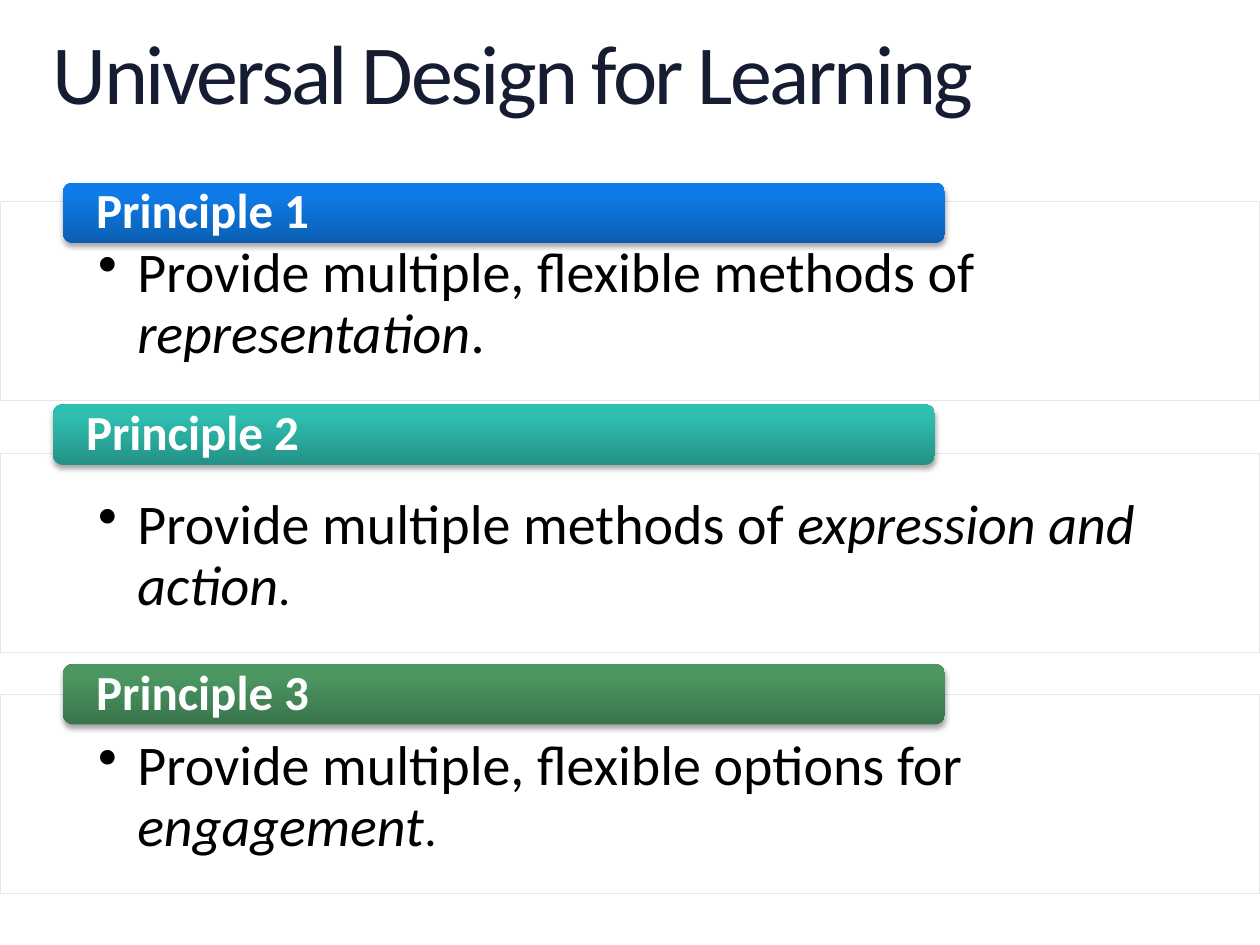
import pptx
import pptx.util
import pptx.dml.color
import pptx.enum.shapes
import pptx.enum.text
import pptx.oxml.ns
from dataclasses import dataclass
from lxml import etree

Inches = pptx.util.Inches
Pt = pptx.util.Pt
RGB = pptx.dml.color.RGBColor.from_string
SHAPE = pptx.enum.shapes.MSO_SHAPE
ANCHOR = pptx.enum.text.MSO_ANCHOR
ALIGN = pptx.enum.text.PP_ALIGN


@dataclass
class Theme:
    font: str = "Calibri"
    title: str = "161D32"
    text: str = "000000"
    panel: str = "FFFFFF"
    edge: str = "E6E6E6"
    label: str = "FFFFFF"
    shadow: str = "000000"
    title_size: int = 48
    body_size: int = 32
    label_size: int = 28


theme = Theme()


def add(parent, tag, **attrs):
    """Append a DrawingML element with the given attributes."""
    node = etree.SubElement(parent, pptx.oxml.ns.qn("a:" + tag))
    for key, value in attrs.items():
        node.set(key, str(value))
    return node


def write(para, text, size, color, bold=False, italic=False):
    """Add one formatted run."""
    run = para.add_run()
    run.text = text
    font = run.font
    font.name, font.size = theme.font, Pt(size)
    font.bold, font.italic = bold, italic
    font.color.rgb = RGB(color)
    return run


deck = pptx.Presentation()
deck.slide_width, deck.slide_height = Inches(10), Inches(7.5)
slide = deck.slides.add_slide(deck.slide_layouts[5])

title = slide.shapes.title
title.left, title.top = Inches(0.42), Inches(0.25)
title.width, title.height = Inches(9.17), Inches(0.73)
frame = title.text_frame
frame.margin_left = frame.margin_right = frame.margin_top = frame.margin_bottom = 0
frame.vertical_anchor = ANCHOR.TOP
para = frame.paragraphs[0]
para.alignment = ALIGN.LEFT
para.line_spacing = 0.9
run = write(para, "Universal Design for Learning", theme.title_size, theme.title)
run.font._element.set("spc", "-150")

# panel top, bar left, bar top, gradient from bottom to top, plain words, stressed words, full stop size
rows = [
    (1.6, 0.5, 1.45, ("0B5FB2", "0F7BE7", "0B7CED"),
     "Provide multiple, flexible methods of ", "representation", 32),
    (3.6, 0.42, 3.21, ("249287", "2EBDAF", "2CC1B2"),
     "Provide multiple methods of ", "expression and action", 28),
    (5.51, 0.5, 5.27, ("39744B", "4B9661", "4A9861"),
     "Provide multiple, flexible options for ", "engagement", 28),
]

for num, (top, left, bar_top, shades, plain, stress, stop_size) in enumerate(rows, 1):
    panel = slide.shapes.add_shape(
        SHAPE.RECTANGLE, 0, Inches(top), Inches(10), Inches(1.58))
    panel.name = f"Panel {num}"
    panel.shadow.inherit = False
    panel.fill.solid()
    panel.fill.fore_color.rgb = RGB(theme.panel)
    fill = panel._element.spPr.find(pptx.oxml.ns.qn("a:solidFill"))
    add(fill[0], "alpha", val=90000)
    panel.line.color.rgb = RGB(theme.edge)
    panel.line.width = Pt(0.75)

    frame = panel.text_frame
    frame.word_wrap = True
    frame.vertical_anchor = ANCHOR.TOP
    frame.margin_left = frame.margin_right = Inches(0.78)
    frame.margin_top, frame.margin_bottom = Inches(0.34), Inches(0.25)
    para = frame.paragraphs[0]
    props = para._p.get_or_add_pPr()
    props.set("marL", str(Inches(0.31)))
    props.set("indent", str(-Inches(0.31)))
    add(props, "buChar", char="•")
    para.alignment = ALIGN.LEFT
    para.line_spacing = 0.9
    write(para, plain, theme.body_size, theme.text)
    write(para, stress, theme.body_size, theme.text, italic=True)
    write(para, ".", stop_size, theme.text)

    bar = slide.shapes.add_shape(
        SHAPE.ROUNDED_RECTANGLE, Inches(left), Inches(bar_top), Inches(7), Inches(0.48))
    bar.name = f"Bar {num}"
    bar.line.fill.background()
    bar.fill.gradient()
    bar.fill.gradient_angle = 90
    props = bar._element.spPr
    stops = props.find(".//" + pptx.oxml.ns.qn("a:gsLst"))
    for stop in list(stops):
        stops.remove(stop)
    for pos, shade in zip((0, 80, 100), shades):
        add(add(stops, "gs", pos=pos * 1000), "srgbClr", val=shade)

    bar.shadow.inherit = False
    effects = props.find(pptx.oxml.ns.qn("a:effectLst"))
    cast = add(effects, "outerShdw", blurRad=Pt(3.1), dist=Pt(1.8),
               dir=90 * 60000, rotWithShape=0)
    add(add(cast, "srgbClr", val=theme.shadow), "alpha", val=35000)

    frame = bar.text_frame
    frame.word_wrap = True
    frame.vertical_anchor = ANCHOR.MIDDLE
    frame.margin_left = frame.margin_right = Inches(0.24)
    frame.margin_top = frame.margin_bottom = 0
    para = frame.paragraphs[0]
    para.alignment = ALIGN.LEFT
    para.line_spacing = 0.9
    write(para, f"Principle {num}", theme.label_size, theme.label, bold=True)

deck.save("out.pptx")
